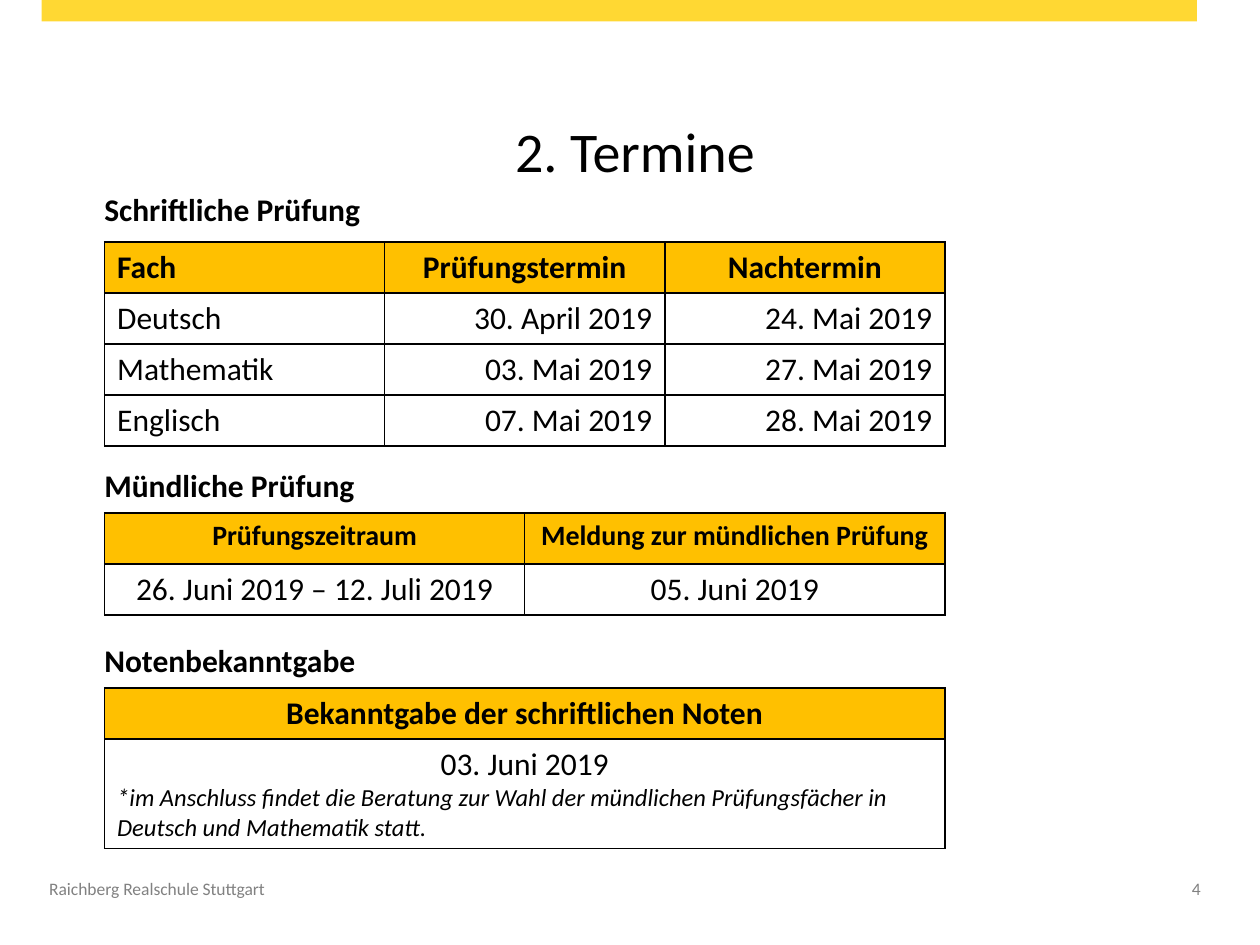
import pptx
import pptx.chart.data
import pptx.dml.color
import pptx.enum.shapes
import pptx.enum.text
import pptx.oxml
import pptx.oxml.ns
import pptx.util

Inches = pptx.util.Inches
Pt = pptx.util.Pt
ALIGN = {
    "l": pptx.enum.text.PP_ALIGN.LEFT,
    "c": pptx.enum.text.PP_ALIGN.CENTER,
    "r": pptx.enum.text.PP_ALIGN.RIGHT,
}
ANCHOR = pptx.enum.text.MSO_ANCHOR

THEME = {
    "font": "Calibri",
    "text": "000000",
    "muted": "818181",
    "band": "FFD833",
    "header": "FFC000",
    "border": "000000",
    "title_size": 32,
    "body_size": 18,
    "compact_size": 16,
    "note_size": 14,
    "footer_size": 10,
}

TITLE = "2. Termine"
SCHOOL = "Raichberg Realschule Stuttgart"
PAGE = "4"
NOTE = (
    "*im Anschluss findet die Beratung zur Wahl der mündlichen "
    "Prüfungsfächer in Deutsch und Mathematik statt."
)

SECTIONS = [
    {
        "heading": "Schriftliche Prüfung",
        "heading_top": 1.46,
        "table_top": 1.92,
        "header_size": "body_size",
        "header_align": "lcc",
        "body_align": "lrr",
        "rows": [
            ["Fach", "Prüfungstermin", "Nachtermin"],
            ["Deutsch", "30. April 2019", "24. Mai 2019"],
            ["Mathematik", "03. Mai 2019", "27. Mai 2019"],
            ["Englisch", "07. Mai 2019", "28. Mai 2019"],
        ],
    },
    {
        "heading": "Mündliche Prüfung",
        "heading_top": 3.65,
        "table_top": 4.07,
        "header_size": "compact_size",
        "header_align": "cc",
        "body_align": "cc",
        "rows": [
            ["Prüfungszeitraum", "Meldung zur mündlichen Prüfung"],
            ["26. Juni 2019 – 12. Juli 2019", "05. Juni 2019"],
        ],
    },
    {
        "heading": "Notenbekanntgabe",
        "heading_top": 5.04,
        "table_top": 5.46,
        "header_size": "body_size",
        "header_align": "c",
        "body_align": "c",
        "rows": [["Bekanntgabe der schriftlichen Noten"], ["03. Juni 2019"]],
        "note": NOTE,
    },
]

TABLE_LEFT, TABLE_WIDTH = 0.83, 6.67
ROW_HEIGHT, NOTE_ROW_HEIGHT = 0.405, 0.87
HEADING_LEFT, HEADING_WIDTH, HEADING_HEIGHT = 0.73, 8.7, 0.4


def rgb(name):
    """Return the theme colour of this name."""
    return pptx.dml.color.RGBColor.from_string(THEME[name])


def write(paragraph, text, size="body_size", align="l", color="text", **style):
    """Fill one paragraph with a formatted run."""
    paragraph.alignment = ALIGN[align]
    run = paragraph.add_run()
    run.text = text
    formats = {"name": THEME["font"], "size": Pt(THEME[size]), "bold": False, **style}
    for key, value in formats.items():
        setattr(run.font, key, value)
    run.font.color.rgb = rgb(color)


def add_text(slide, box, text, inset=True, anchor=ANCHOR.TOP, **style):
    """Add a wrapped text box with a single paragraph."""
    frame = slide.shapes.add_textbox(*map(Inches, box)).text_frame
    formats = {"word_wrap": True, "vertical_anchor": anchor}
    if not inset:
        formats.update({f"margin_{side}": 0 for side in ("left", "right", "top", "bottom")})
    for key, value in formats.items():
        setattr(frame, key, value)
    write(frame.paragraphs[0], text, **style)


def add_borders(cell):
    """Draw a thin line on all four sides of a cell."""
    properties = cell._tc.get_or_add_tcPr()
    for index, side in enumerate("LRTB"):
        line = pptx.oxml.parse_xml(
            f'<a:ln{side} {pptx.oxml.ns.nsdecls("a")} w="{Pt(1)}"><a:solidFill>'
            f'<a:srgbClr val="{THEME["border"]}"/></a:solidFill></a:ln{side}>'
        )
        properties.insert(index, line)


def add_section(slide, section):
    """Add a heading and its table of dates."""
    heading_box = (HEADING_LEFT, section["heading_top"], HEADING_WIDTH, HEADING_HEIGHT)
    add_text(slide, heading_box, section["heading"], bold=True)

    rows = section["rows"]
    columns = len(rows[0])
    heights = [ROW_HEIGHT] * len(rows)
    if "note" in section:
        heights[-1] = NOTE_ROW_HEIGHT
    box = (TABLE_LEFT, section["table_top"], TABLE_WIDTH, sum(heights))
    table = slide.shapes.add_table(len(rows), columns, *map(Inches, box)).table
    for flag in ("first_row", "horz_banding"):
        setattr(table, flag, False)
    for column in table.columns:
        column.width = Inches(TABLE_WIDTH / columns)

    for r, values in enumerate(rows):
        table.rows[r].height = Inches(heights[r])
        is_header = r == 0
        aligns = section["header_align" if is_header else "body_align"]
        size = section["header_size"] if is_header else "body_size"
        for c, (value, align) in enumerate(zip(values, aligns)):
            cell = table.cell(r, c)
            if is_header:
                cell.fill.solid()
                cell.fill.fore_color.rgb = rgb("header")
            else:
                cell.fill.background()
            add_borders(cell)
            write(cell.text_frame.paragraphs[0], value, size, align, bold=is_header)

    if "note" in section:
        paragraph = table.cell(len(rows) - 1, 0).text_frame.add_paragraph()
        write(paragraph, section["note"], "note_size", italic=True)


def main():
    """Build the slide of exam dates."""
    presentation = pptx.Presentation()
    presentation.slide_width, presentation.slide_height = Inches(10), Inches(7.5)
    slide = presentation.slides.add_slide(presentation.slide_layouts[6])

    band = slide.shapes.add_shape(
        pptx.enum.shapes.MSO_SHAPE.RECTANGLE, *map(Inches, (0.33, 0, 9.17, 0.17))
    )
    band.shadow.inherit = False
    band.fill.solid()
    band.fill.fore_color.rgb = rgb("band")
    band.line.fill.background()

    footer = {"inset": False, "size": "footer_size", "color": "muted"}
    add_text(slide, (8.7, 6.97, 0.83, 0.39), PAGE, align="r", **footer)
    add_text(slide, (0.39, 6.97, 5.51, 0.39), SCHOOL, **footer)
    add_text(
        slide, (0.55, 0.56, 8.98, 1.26), TITLE,
        anchor=ANCHOR.MIDDLE, size="title_size", align="c",
    )
    for section in SECTIONS:
        add_section(slide, section)
    presentation.save("out.pptx")


if __name__ == "__main__":
    main()
